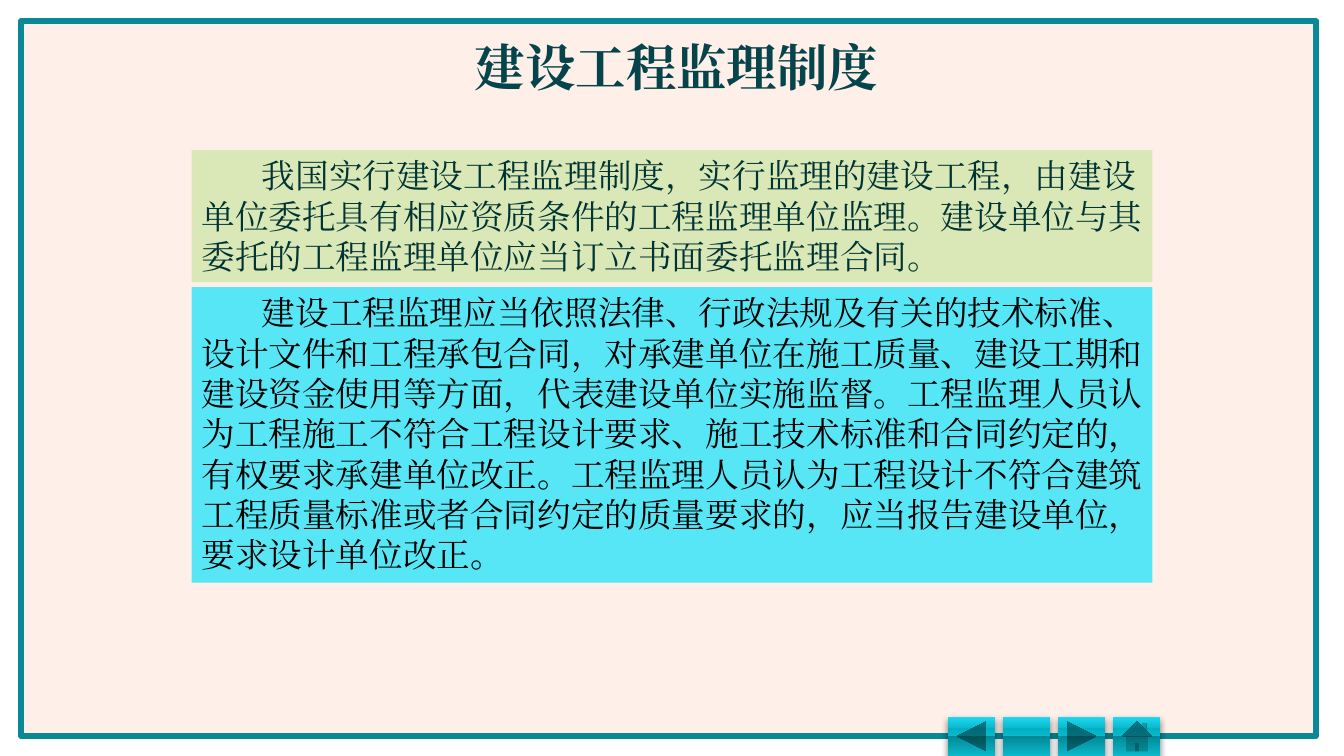
"""Build the slide on the construction supervision system."""
from dataclasses import dataclass

from lxml import etree
from pptx import Presentation
from pptx.dml.color import RGBColor
from pptx.enum import shapes, text
from pptx.oxml import parse_xml
from pptx.oxml.ns import nsdecls, qn
from pptx.util import Inches, Pt

FONT = "Times New Roman"
TEAL = RGBColor(0x09, 0x88, 0x95)
CREAM = RGBColor(0xFE, 0xF0, 0xE8)
TITLE_TEAL = RGBColor(0x04, 0x44, 0x4A)
GREEN = RGBColor(0xD9, 0xE8, 0xB6)
CYAN = RGBColor(0x57, 0xE6, 0xF5)
DARK_GREEN = RGBColor(0x00, 0x33, 0x33)
BLACK = RGBColor(0x00, 0x00, 0x00)
BUTTON_STOPS = [(0, "0CB8CA"), (50, "008997"), (50, "0CB8CA"),
                (70, "00B1C6"), (70, "0CB8CA"), (100, "1DD9F3")]
BUTTONS = [shapes.MSO_SHAPE.ACTION_BUTTON_BACK_OR_PREVIOUS,
           shapes.MSO_SHAPE.ACTION_BUTTON_CUSTOM,
           shapes.MSO_SHAPE.ACTION_BUTTON_FORWARD_OR_NEXT,
           shapes.MSO_SHAPE.ACTION_BUTTON_HOME]


@dataclass
class Panel:
    """A filled block of body text."""
    top: float
    height: float
    fill: RGBColor
    color: RGBColor
    words: str


PANELS = [
    Panel(1.49, 1.31, GREEN, DARK_GREEN,
          "我国实行建设工程监理制度，实行监理的建设工程，由建设单位委托具有相应资质条件的"
          "工程监理单位监理。建设单位与其委托的工程监理单位应当订立书面委托监理合同。"),
    Panel(2.85, 2.93, CYAN, BLACK,
          "建设工程监理应当依照法律、行政法规及有关的技术标准、设计文件和工程承包合同，"
          "对承建单位在施工质量、建设工期和建设资金使用等方面，代表建设单位实施监督。"
          "工程监理人员认为工程施工不符合工程设计要求、施工技术标准和合同约定的，"
          "有权要求承建单位改正。工程监理人员认为工程设计不符合建筑工程质量标准或者"
          "合同约定的质量要求的，应当报告建设单位，要求设计单位改正。"),
]


def write(sp, words: str, align, size: float, color: RGBColor, bold: bool) -> None:
    """Put one formatted paragraph in a shape."""
    tf = sp.text_frame
    frame = {"word_wrap": True, "auto_size": text.MSO_AUTO_SIZE.NONE,
             "vertical_anchor": text.MSO_ANCHOR.TOP,
             "margin_left": Inches(0.1), "margin_right": Inches(0.05),
             "margin_top": Inches(0.05), "margin_bottom": Inches(0.05)}
    for name, value in frame.items():
        setattr(tf, name, value)
    p = tf.paragraphs[0]
    p.alignment = align
    p.line_spacing = Pt(size * 1.2)
    p.space_before = Pt(0)
    r = p.add_run()
    r.text = words
    for name, value in {"name": FONT, "size": Pt(size), "bold": bold}.items():
        setattr(r.font, name, value)
    r.font.color.rgb = color
    etree.SubElement(r.font._element, qn("a:ea"), typeface=FONT)


def add_box(s, kind, left: float, top: float, width: float, height: float,
            fill: RGBColor):
    """Add a flat borderless shape."""
    sp = s.shapes.add_shape(kind, Inches(left), Inches(top), Inches(width), Inches(height))
    sp.shadow.inherit = False
    sp.fill.solid()
    sp.fill.fore_color.rgb = fill
    sp.line.fill.background()
    return sp


def add_panel(s, panel: Panel) -> None:
    """Add a text panel with an indented first line."""
    sp = add_box(s, shapes.MSO_SHAPE.RECTANGLE, 1.9, panel.top, 9.53, panel.height, panel.fill)
    write(sp, panel.words, text.PP_ALIGN.LEFT, 24, panel.color, False)
    sp.text_frame.paragraphs[0]._p.get_or_add_pPr().set("indent", str(Inches(0.6)))


def add_button(s, kind, left: float) -> None:
    """Add a glossy navigation button with a soft shadow."""
    sp = add_box(s, kind, left, 7.11, 0.47, 0.39, TEAL)
    stops = "".join(f'<a:gs pos="{pos * 1000}"><a:srgbClr val="{color}"/></a:gs>'
                    for pos, color in BUTTON_STOPS)
    pr = sp._element.spPr
    pr.replace(pr.find(qn("a:solidFill")), parse_xml(
        f'<a:gradFill {nsdecls("a")} rotWithShape="1"><a:gsLst>{stops}</a:gsLst>'
        '<a:lin ang="16200000" scaled="0"/></a:gradFill>'))
    pr.find(qn("a:effectLst")).append(parse_xml(
        f'<a:outerShdw {nsdecls("a")} blurRad="{Pt(5)}" dist="{Pt(3)}" dir="5400000" '
        'rotWithShape="0"><a:srgbClr val="000000"><a:alpha val="45000"/></a:srgbClr>'
        '</a:outerShdw>'))


def main() -> None:
    """Assemble and save the slide."""
    prs = Presentation()
    prs.slide_width, prs.slide_height = Inches(13.33), Inches(7.5)
    s = prs.slides.add_slide(prs.slide_layouts[5])
    frame = add_box(s, shapes.MSO_SHAPE.RECTANGLE, 0.21, 0.21, 12.84, 7.09, CREAM)
    frame.line.color.rgb = TEAL
    frame.line.width = Pt(4.33)
    s.shapes._spTree.insert(2, frame._element)
    title = s.shapes.title
    place = {"left": 1.96, "top": 0.31, "width": 9.45, "height": 0.71}
    for name, value in place.items():
        setattr(title, name, Inches(value))
    write(title, "建设工程监理制度", text.PP_ALIGN.CENTER, 36, TITLE_TEAL, True)
    for panel in PANELS:
        add_panel(s, panel)
    for i, kind in enumerate(BUTTONS):
        add_button(s, kind, 9.4 + i * 0.547)
    prs.save("out.pptx")


if __name__ == "__main__":
    main()
